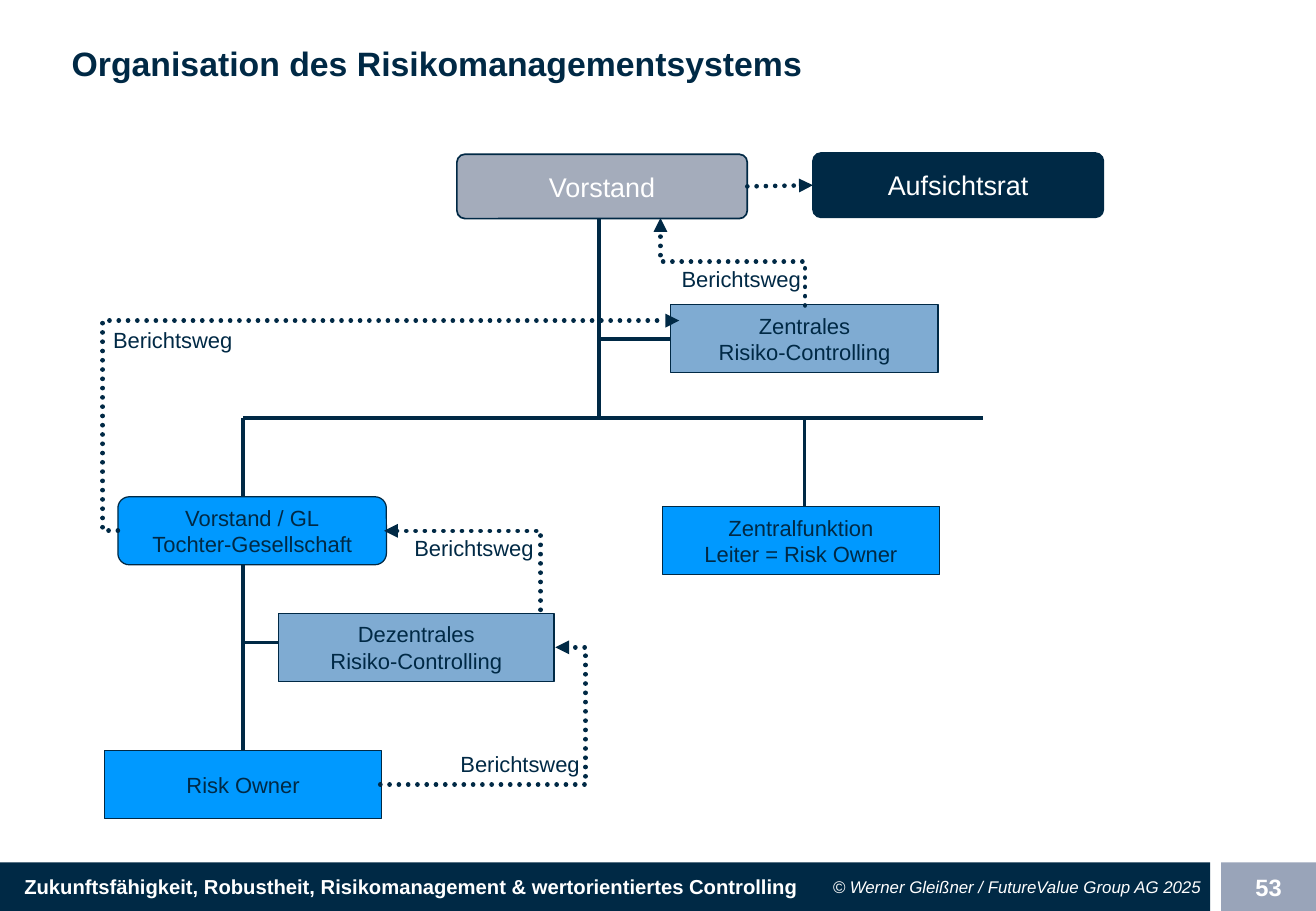
from lxml.etree import SubElement
from pptx import Presentation
from pptx.dml.color import RGBColor
from pptx.enum.dml import MSO_LINE
from pptx.enum.shapes import MSO_CONNECTOR, MSO_SHAPE
from pptx.enum.text import MSO_ANCHOR, MSO_AUTO_SIZE, PP_ALIGN
from pptx.oxml.ns import qn
from pptx.util import Emu, Pt

PX = 9144  # 100 px to the inch
THEME = {
    "navy": RGBColor(0x00, 0x29, 0x45), "white": RGBColor(0xFF, 0xFF, 0xFF),
    "grey": RGBColor(0xA4, 0xAC, 0xBB), "page": RGBColor(0x99, 0xA4, 0xB9),
    "steel": RGBColor(0x7F, 0xAB, 0xD2), "blue": RGBColor(0x00, 0x99, 0xFF),
    "font": "Arial", "title": 20, "board": 16, "unit": 13,
    "foot": 12, "number": 14, "credit": 10,
}
LEFT, MID, RIGHT = PP_ALIGN.LEFT, PP_ALIGN.CENTER, PP_ALIGN.RIGHT
RECT, ROUND = MSO_SHAPE.RECTANGLE, MSO_SHAPE.ROUNDED_RECTANGLE


def write(shape, text, size, color, align=MID, inset=(9, 5, 9, 5),
          anchor=MSO_ANCHOR.MIDDLE, **style):
    """Set the text of a shape, one paragraph per line, in one format."""
    frame = shape.text_frame
    frame.text = text
    sides = ("margin_left", "margin_top", "margin_right", "margin_bottom")
    form = dict(zip(sides, (Emu(n * PX) for n in inset)))
    form |= {"word_wrap": True, "auto_size": MSO_AUTO_SIZE.NONE,
             "vertical_anchor": anchor}
    for key, value in form.items():
        setattr(frame, key, value)
    face = {"name": THEME["font"], "size": Pt(THEME[size])} | style
    for para in frame.paragraphs:
        para.alignment = align
        para.font.color.rgb = THEME[color]
        for key, value in face.items():
            setattr(para.font, key, value)


def link(kind, ends, width, arrow=None):
    """Draw a connector; with an arrow ("headEnd" or "tailEnd") it is dotted."""
    line = slide.shapes.add_connector(kind, *(Emu(n * PX) for n in ends))
    line.line.color.rgb = THEME["navy"]
    line.line.width = Pt(width)
    if arrow:
        line.line.dash_style = MSO_LINE.ROUND_DOT
        stroke = line.get_or_add_ln()
        stroke.set("cap", "rnd")
        SubElement(stroke, qn("a:" + arrow)).set("type", "triangle")
    SubElement(line._element.spPr, qn("a:effectLst"))
    return line


deck = Presentation()
deck.slide_width, deck.slide_height = Emu(1083 * PX), Emu(750 * PX)
slide = deck.slides.add_slide(deck.slide_layouts[5])

title = slide.shapes.title
for key, value in {"left": 51, "top": 16, "width": 945, "height": 71}.items():
    setattr(title, key, Emu(value * PX))
write(title, "Organisation des Risikomanagementsystems", "title", "navy",
      LEFT, (8, 4, 8, 4), bold=True)

# Footer
BARS = [
    (0, 996, "navy", "Zukunftsfähigkeit, Robustheit, Risikomanagement & "
     "wertorientiertes Controlling", "foot", LEFT, 20, {"bold": True}),
    (1005, 78, "page", "53", "number", MID, 8, {"bold": True}),
    (563, 433, None, "© Werner Gleißner / FutureValue Group AG 2025",
     "credit", RIGHT, 8, {"italic": True}),
]
for left, width, fill, text, size, align, pad, style in BARS:
    area = [Emu(n * PX) for n in (left, 710, width, 40)]
    if fill:
        bar = slide.shapes.add_shape(RECT, *area)
        bar.shadow.inherit = False
        bar.fill.solid()
        bar.fill.fore_color.rgb = THEME[fill]
        bar.line.fill.background()
    else:
        bar = slide.shapes.add_textbox(*area)
    write(bar, text, size, "white", align, (pad, 4, 8, 4), **style)

# Units of the organisation
UNITS = {
    "council": (ROUND, 669, 126, 239, 53, "navy", "Aufsichtsrat"),
    "board": (ROUND, 376, 127, 239, 53, "grey", "Vorstand"),
    "central": (RECT, 552, 251, 220, 56, "steel",
                "Zentrales\nRisiko-Controlling"),
    "staff": (RECT, 545, 417, 228, 56, "blue",
              "Zentralfunktion\nLeiter = Risk Owner"),
    "branch": (ROUND, 97, 409, 221, 56, "blue",
               "Vorstand / GL\nTochter-Gesellschaft"),
    "local": (RECT, 229, 505, 227, 56, "steel",
              "Dezentrales\nRisiko-Controlling"),
    "owner": (RECT, 86, 618, 228, 56, "blue", "Risk Owner"),
}
units = {}
for name, (form, *area, fill, text) in UNITS.items():
    top = name in ("council", "board")
    unit = slide.shapes.add_shape(form, *(Emu(n * PX) for n in area))
    unit.shadow.inherit = False
    unit.fill.solid()
    unit.fill.fore_color.rgb = THEME[fill]
    unit.line.color.rgb = THEME["navy"]
    unit.line.width = Pt(1 if top else 0.75)
    if top:
        unit.adjustments[0] = 0.125
    write(unit, text, "board" if top else "unit", "white" if top else "navy")
    units[name] = unit

# Lines of command
TREE = [
    ((200, 344, 809, 344), None),
    ((200, 344, 200, 409), None),
    ((662, 344, 662, 417), None),
    ((493, 180, 493, 344), None),
    ((200, 529, 229, 529), None),
    ((200, 465, 200, 618), ("owner", 0)),
    ((493, 279, 552, 279), ("central", 1)),
]
for ends, join in TREE:
    line = link(MSO_CONNECTOR.STRAIGHT, ends, 2.25)
    if join:
        line.end_connect(units[join[0]], join[1])

# Reporting lines
report = link(MSO_CONNECTOR.STRAIGHT, (615, 153, 669, 153), 2.75, "tailEnd")
report.begin_connect(units["board"], 3)
report.end_connect(units["council"], 1)

ROUTES = [  # ends, arrow, preset, bend in 1/100000 of the width, turn
    ((97, 437, 559, 264), "tailEnd", "bentConnector3", -2700, 0),
    ((316, 437, 445, 505), "headEnd", "bentConnector2", None, 0),
    ((313, 646, 457, 533), "tailEnd", "bentConnector3", 117300, 0),
    ((567, 275, 639, 156), "tailEnd", "bentConnector3", 50000, 270),
]
for ends, arrow, preset, bend, turn in ROUTES:
    route = link(MSO_CONNECTOR.ELBOW, ends, 2.75, arrow)._element
    shape = route.xpath(".//a:prstGeom")[0]
    shape.set("prst", preset)
    if bend is not None:
        guide = SubElement(shape.find(qn("a:avLst")), qn("a:gd"))
        guide.set("name", "adj1")
        guide.set("fmla", f"val {bend}")
    if turn:
        route.xpath(".//a:xfrm")[0].set("rot", str(turn * 60000))

LABELS = [(84, 265, LEFT), (332, 436, LEFT), (331, 614, RIGHT),
          (513, 215, RIGHT)]
for left, top, align in LABELS:
    label = slide.shapes.add_textbox(
        *(Emu(n * PX) for n in (left, top, 155, 31)))
    write(label, "Berichtsweg", "unit", "navy", align, (9, 4, 9, 4),
          MSO_ANCHOR.TOP)

deck.save("out.pptx")
